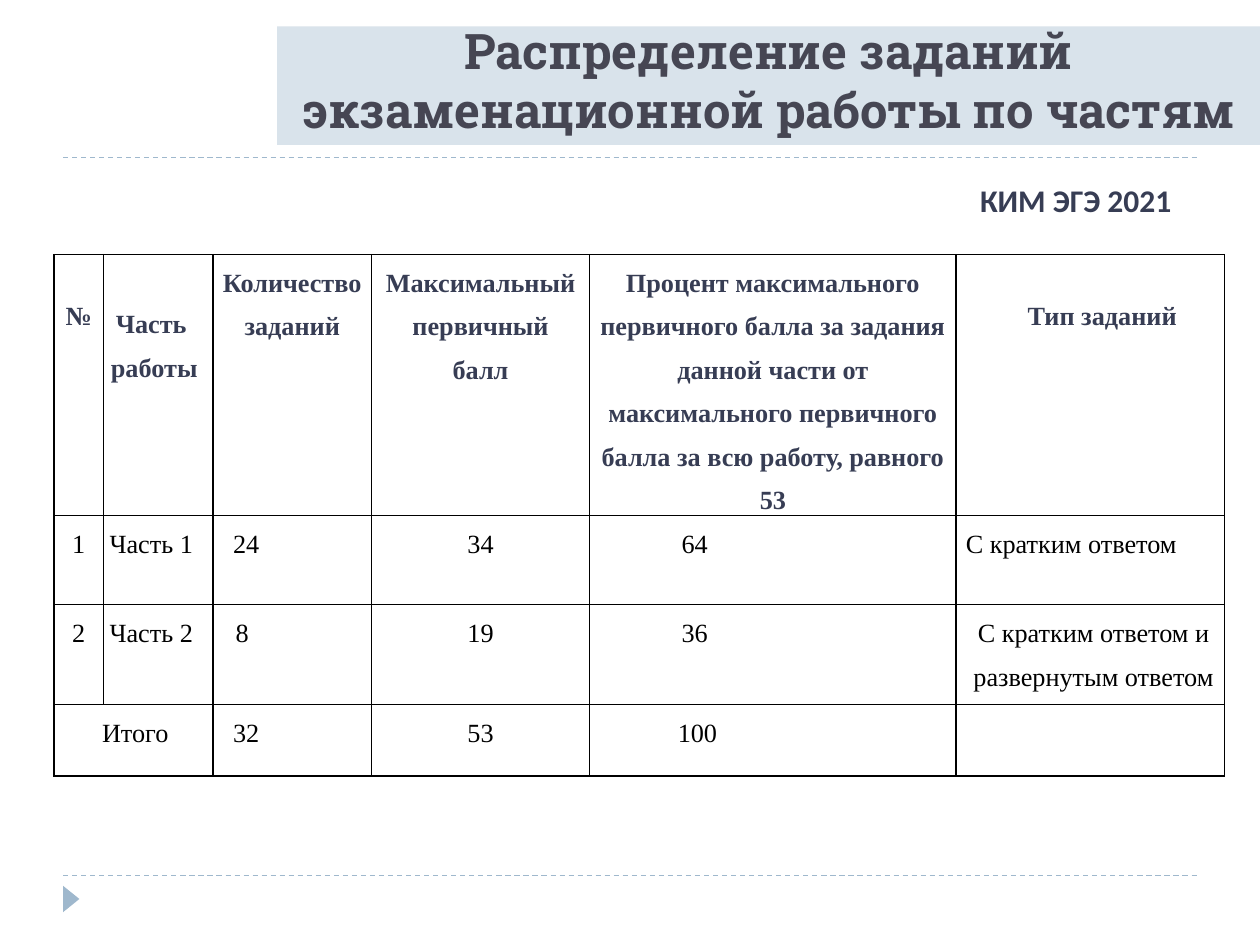
from dataclasses import dataclass

from lxml.etree import SubElement as Sub
from pptx import Presentation
from pptx.dml.color import RGBColor as RGB
from pptx.enum.dml import MSO_LINE as Dash
from pptx.enum.shapes import MSO_CONNECTOR as Conn, MSO_SHAPE as Shape
from pptx.enum.text import MSO_ANCHOR as Anchor, MSO_AUTO_SIZE as Fit, PP_ALIGN as Align
from pptx.oxml.ns import qn
from pptx.util import Inches, Pt


@dataclass(frozen=True)
class Theme:
    title: str = "464653"
    band: str = "D9E3EB"
    accent: str = "9FB8CD"
    head: str = "373D54"
    ink: str = "000000"
    title_font: str = "Roboto Slab"
    note_font: str = "Calibri"
    cell_font: str = "Times New Roman"
    title_size: int = 28
    note_size: int = 18
    cell_size: int = 15


THEME = Theme()
L, C, R = Align.LEFT, Align.CENTER, Align.RIGHT

COLS = (0.39, 0.87, 1.26, 1.73, 2.91, 2.13)
ROWS = (1.89, 0.71, 0.79, 0.57)

# Each cell: text, alignment, left, right and top margin in inches
HEAD = (
    ("№", C, 0, 0, 0.26),
    ("Часть работы", L, 0.06, 0, 0.33),
    ("Количество заданий", C, 0.05, 0.05, 0),
    ("Максимальный первичный балл", C, 0.09, 0.09, 0),
    ("Процент максимального первичного балла за задания данной части "
     "от максимального первичного балла за всю работу, равного 53", C, 0.06, 0.06, 0),
    ("Тип заданий", R, 0, 0.38, 0.26),
)


def score(count, points, share, left=0.16, inset=0.73):
    """Cells for the three number columns."""
    return ((count, L, left, 0, 0), (points, C, 0.24, 0.24, 0), (share, L, inset, 0, 0))


BODY = (
    (("1", C, 0, 0, 0), ("Часть 1", L, 0.05, 0, 0), *score("24", "34", "64"),
     ("С кратким ответом", R, 0, 0.38, 0)),
    (("2", C, 0, 0, 0), ("Часть 2", L, 0.05, 0, 0), *score("8", "19", "36", left=0.18),
     ("С кратким ответом и развернутым ответом", C, 0.05, 0, 0)),
    (("Итого", L, 0.38, 0, 0), None, *score("32", "53", "100", inset=0.7), None),
)


def add_run(para, text, font, size, color, bold=True):
    run = para.add_run()
    run.text = text
    run.font.name, run.font.size, run.font.bold = font, Pt(size), bold
    run.font.color.rgb = RGB.from_string(color)


def add_rule(slide, x, y, w):
    """Dashed horizontal line."""
    line = slide.shapes.add_connector(
        Conn.STRAIGHT, Inches(x), Inches(y), Inches(x + w), Inches(y))
    line.line.color.rgb = RGB.from_string(THEME.accent)
    line.line.width, line.line.dash_style = Pt(0.75), Dash.DASH
    Sub(line._element.spPr, qn("a:effectLst"))


def add_mark(slide, x, y, w, h):
    """Triangle pointing right, in the footer."""
    mark = slide.shapes.add_shape(
        Shape.ISOSCELES_TRIANGLE, Inches(x), Inches(y), Inches(w), Inches(h))
    mark.rotation = 90
    mark.shadow.inherit = False
    mark.fill.solid()
    mark.fill.fore_color.rgb = RGB.from_string(THEME.accent)
    mark.line.fill.background()


def set_title(slide, x, y, w, h):
    title = slide.shapes.title
    title.left, title.top, title.width, title.height = map(Inches, (x, y, w, h))
    title.fill.solid()
    title.fill.fore_color.rgb = RGB.from_string(THEME.band)
    frame = title.text_frame
    frame.auto_size, frame.word_wrap = Fit.NONE, True
    frame.vertical_anchor = Anchor.BOTTOM
    para = frame.paragraphs[0]
    para.alignment = C
    add_run(para, "Распределение заданий экзаменационной работы по частям",
            THEME.title_font, THEME.title_size, THEME.title)


def add_note(slide, x, y, w, h):
    """Exam label above the table."""
    frame = slide.shapes.add_textbox(*map(Inches, (x, y, w, h))).text_frame
    frame.word_wrap, frame.auto_size = True, Fit.SHAPE_TO_FIT_TEXT
    add_run(frame.paragraphs[0], "КИМ ЭГЭ 2021",
            THEME.note_font, THEME.note_size, THEME.head)


def frame_cell(cell):
    """Thin border on all sides and no fill."""
    props = cell._tc.get_or_add_tcPr()
    for side in ("lnL", "lnR", "lnT", "lnB"):
        edge = Sub(props, qn(f"a:{side}"), w=str(Pt(1)))
        fill = Sub(edge, qn("a:solidFill"))
        Sub(fill, qn("a:srgbClr"), val=THEME.ink)
    cell.fill.background()


def fill_cell(cell, item, head):
    text, align, left, right, top = item
    cell.margin_left, cell.margin_right = Inches(left), Inches(right)
    cell.margin_top, cell.margin_bottom = Inches(top), 0
    para = cell.text_frame.paragraphs[0]
    para.alignment, para.line_spacing = align, 1.5
    if head and align == L:
        para._p.get_or_add_pPr().set("indent", str(Inches(0.04)))
    add_run(para, text, THEME.cell_font, THEME.cell_size,
            THEME.head if head else THEME.ink, head)


def add_grid(slide, x, y):
    """Table of parts, tasks and points."""
    grid = slide.shapes.add_table(
        len(ROWS), len(COLS), Inches(x), Inches(y),
        Inches(sum(COLS)), Inches(sum(ROWS))).table
    grid.first_row = grid.horz_banding = False
    for col, width in zip(grid.columns, COLS):
        col.width = Inches(width)
    for row, height in zip(grid.rows, ROWS):
        row.height = Inches(height)
    for r, items in enumerate((HEAD, *BODY)):
        for c, item in enumerate(items):
            cell = grid.cell(r, c)
            frame_cell(cell)
            if item:
                fill_cell(cell, item, r == 0)
    last = len(ROWS) - 1
    grid.cell(last, 0).merge(grid.cell(last, 1))


def main():
    deck = Presentation()
    deck.slide_width, deck.slide_height = Inches(10), Inches(7.5)
    slide = deck.slides.add_slide(deck.slide_layouts[5])
    for y in (6.95, 1.25):
        add_rule(slide, 0.5, y, 9)
    add_mark(slide, 0.46, 7.07, 0.21, 0.13)
    set_title(slide, 2.2, 0.21, 7.8, 0.94)
    add_grid(slide, 0.43, 2.02)
    add_note(slide, 7.68, 1.39, 2.13, 0.4)
    deck.save("out.pptx")


if __name__ == "__main__":
    main()
